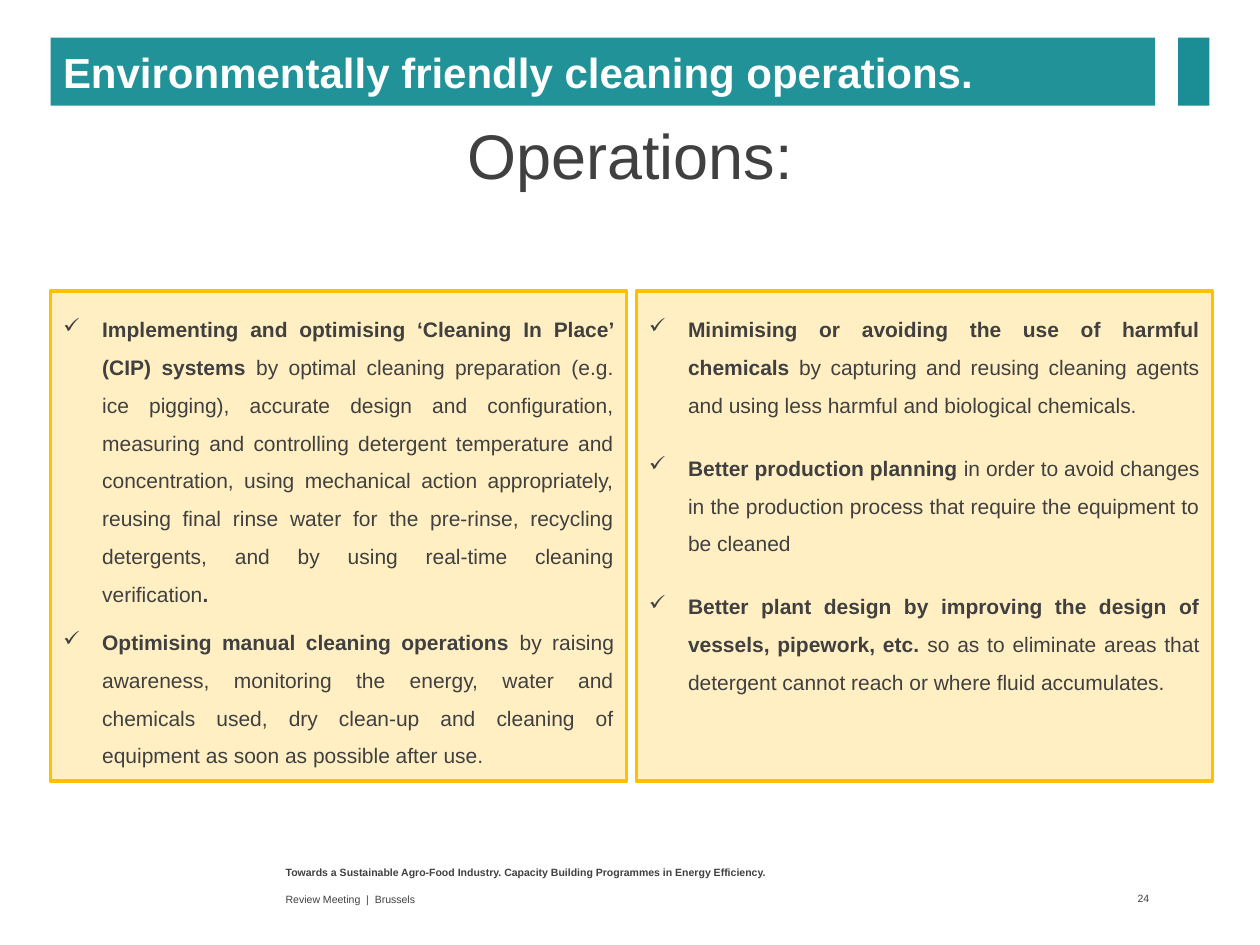
from lxml import etree
from pptx import Presentation
from pptx import util as u
from pptx.dml import color
from pptx.enum import shapes, text
from pptx.oxml import ns

COLORS = {"teal": "209298", "dark": "1B8E95", "gold": "FFC000",
          "ink": "404040", "white": "FFFFFF"}
LEFT = [
    [("Implementing and optimising ‘Cleaning In Place’ (CIP) systems ", True),
     ("by optimal cleaning preparation (e.g. ice pigging), accurate design and "
      "configuration, measuring and controlling detergent temperature and "
      "concentration, using mechanical action appropriately, reusing final rinse "
      "water for the pre-rinse, recycling detergents, and by using real-time "
      "cleaning verification", False),
     (".", True)],
    [("Optimising manual cleaning operations ", True),
     ("by raising awareness, monitoring the energy, water and chemicals used, dry "
      "clean-up and cleaning of equipment as soon as possible after use.", False)],
]
RIGHT = [
    [("Minimising or avoiding the use of harmful chemicals ", True),
     ("by capturing and reusing cleaning agents and using less harmful and "
      "biological chemicals.", False)],
    [("Better production planning ", True),
     ("in order to avoid changes in the production process that require the "
      "equipment to be cleaned", False)],
    [("Better plant design by improving the design of vessels, pipework, etc. ", True),
     ("so as to eliminate areas that detergent cannot reach or where fluid "
      "accumulates.", False)],
]


def tint(name):
    """Return the named colour."""
    return color.RGBColor.from_string(COLORS[name])


def place(shape, x, y, w, h):
    """Move a shape to a box given in centimetres."""
    shape.left, shape.top, shape.width, shape.height = map(u.Cm, (x, y, w, h))


def frame(shape, anchor):
    """Prepare the text frame of a shape and return it."""
    body = shape.text_frame
    body.word_wrap = True
    body.auto_size = text.MSO_AUTO_SIZE.NONE
    body.vertical_anchor = anchor
    body.margin_left = body.margin_right = u.Cm(0.25)
    body.margin_top = body.margin_bottom = u.Cm(0.13)
    return body


def write(para, words, size, ink="ink", bold=False):
    """Add one formatted run to a paragraph."""
    run = para.add_run()
    run.text = words
    run.font.name = "Arial"
    run.font.size = u.Pt(size)
    run.font.bold = bold
    run.font.color.rgb = tint(ink)


def block(slide, x, y, w, h, fill):
    """Draw a plain filled rectangle."""
    rect = slide.shapes.add_shape(
        shapes.MSO_SHAPE.RECTANGLE, *map(u.Cm, (x, y, w, h)))
    rect.shadow.inherit = False
    rect.fill.solid()
    rect.fill.fore_color.rgb = tint(fill)
    rect.line.fill.background()
    return rect


def label(slide, x, y, w, h, words, bold=False, align=text.PP_ALIGN.LEFT):
    """Add a line of small print."""
    box = slide.shapes.add_textbox(*map(u.Cm, (x, y, w, h)))
    body = frame(box, text.MSO_ANCHOR.MIDDLE)
    body.paragraphs[0].alignment = align
    write(body.paragraphs[0], words, 6, bold=bold)
    return body


def header(slide, x, y, w, h):
    """Fill the title bar, its end block and the subtitle."""
    title, sub = slide.shapes.title, slide.placeholders[1]
    place(title, x, y, w - 1.1, h)
    title.fill.solid()
    title.fill.fore_color.rgb = tint("teal")
    para = frame(title, text.MSO_ANCHOR.MIDDLE).paragraphs[0]
    para.alignment = text.PP_ALIGN.LEFT
    write(para, "Environmentally friendly cleaning operations.", 24, "white", True)
    block(slide, x + w - 0.63, y, 0.63, h, "dark")
    place(sub, x, y + 1.85, w, 1.02)
    para = frame(sub, text.MSO_ANCHOR.MIDDLE).paragraphs[0]
    para.alignment = text.PP_ALIGN.CENTER
    para.space_before = u.Pt(0)
    write(para, "Operations:", 36)


def check(para):
    """Give a paragraph a hanging check mark."""
    props = para._p.get_or_add_pPr()
    props.set("marL", str(u.Cm(0.79)))
    props.set("indent", str(-u.Cm(0.79)))
    etree.SubElement(props, ns.qn("a:buFont"), typeface="Wingdings")
    etree.SubElement(props, ns.qn("a:buChar"), char="ü")


def panel(slide, holder, x, y, w, h, items, before, after):
    """Place a gold panel with a checked list on it."""
    rect = block(slide, x, y, w, h, "gold")
    rect.line.color.rgb = tint("gold")
    rect.line.width = u.Pt(2)
    shade = rect.fill._xPr.find(ns.qn("a:solidFill"))[0]
    etree.SubElement(shade, ns.qn("a:alpha"), val="24000")
    holder.element.addprevious(rect.element)
    place(holder, x, y + 0.13, w, h - 0.28)
    body = frame(holder, text.MSO_ANCHOR.TOP)
    for num, runs in enumerate(items):
        para = body.add_paragraph() if num else body.paragraphs[0]
        check(para)
        para.alignment = text.PP_ALIGN.JUSTIFY
        para.line_spacing = 1.5
        para.space_before = u.Pt(before if num else 0)
        para.space_after = u.Pt(after)
        for words, bold in runs:
            write(para, words, 12, bold=bold)


def footer(slide, x, y, w):
    """Add the programme, the meeting and the page number."""
    label(slide, x, y, 13.97, 0.53, "Towards a Sustainable Agro-Food Industry. "
          "Capacity Building Programmes in Energy Efficiency.", True)
    label(slide, x, y + 0.55, 13.97, 0.5, "Review Meeting  |  Brussels")
    page = label(slide, x + w - 1.42, y + 0.53, 1.42, 0.5, "24",
                 align=text.PP_ALIGN.RIGHT)
    page.margin_right = u.Cm(0.1)


def main():
    """Build and save the slide."""
    deck = Presentation()
    deck.slide_width, deck.slide_height = u.Cm(25.4), u.Cm(19.05)
    slide = deck.slides.add_slide(deck.slide_layouts[4])
    spare = slide.placeholders[3].element
    spare.getparent().remove(spare)
    header(slide, 1.02, 0.76, 23.36, 1.37)
    wide, gap = 11.61, 0.2
    lists = [(2, LEFT, 0, 6), (4, RIGHT, 2.4, 12)]
    for col, (idx, items, before, after) in enumerate(lists):
        panel(slide, slide.placeholders[idx], 1.02 + col * (wide + gap), 5.87,
              wide, 9.88, items, before, after)
    footer(slide, 5.51, 17.32, 17.76)
    deck.save("out.pptx")


if __name__ == "__main__":
    main()
